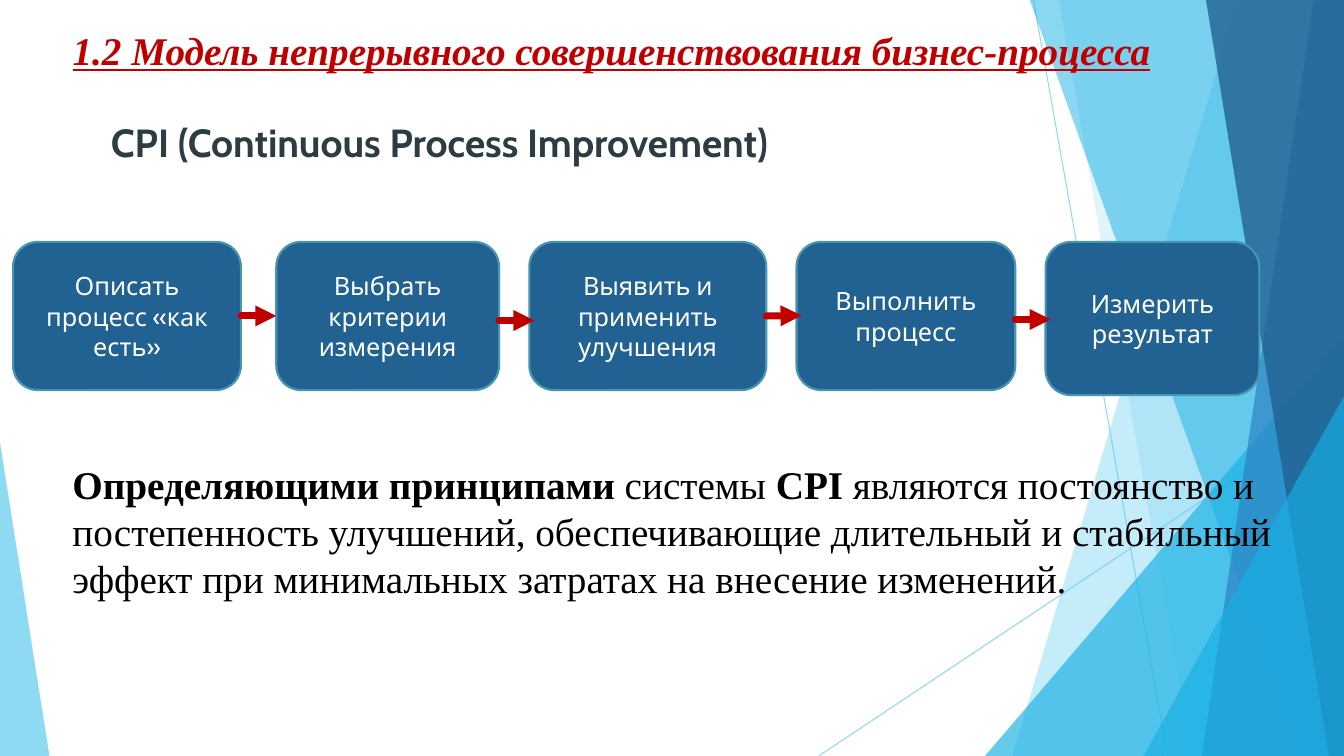
import pptx
import pptx.util
import pptx.dml.color
import pptx.enum.dml
import pptx.enum.shapes
import pptx.enum.text
import pptx.oxml
import pptx.oxml.ns

WIDTH, HEIGHT = 13.33, 7.5
SERIF, SANS = "Times New Roman", "Cabin"
TEXT_LEFT = 0.62
HANG = 0.38

HEADING = "1.2 Модель непрерывного совершенствования бизнес-процесса"
SUBHEADING = "CPI (Continuous Process Improvement)"
PRINCIPLES = [
    ("Определяющими принципами", True),
    (" системы ", False),
    ("CPI", True),
    (" являются постоянство и постепенность улучшений, обеспечивающие "
     "длительный и стабильный эффект при минимальных затратах на внесение изменений.", False),
]

# text, left, width, height, level of the arrow that leaves the step
STEP_TOP = 2.4
ARROW_LENGTH = 0.35
STEPS = [
    ("Описать процесс «как есть»", 0.13, 2.26, 1.47, 3.13),
    ("Выбрать критерии измерения", 2.74, 2.21, 1.47, 3.18),
    ("Выявить и применить улучшения", 5.25, 2.35, 1.47, 3.13),
    ("Выполнить процесс", 7.9, 2.17, 1.47, 3.17),
    ("Измерить результат", 10.37, 2.12, 1.52, None),
]

# from x, from y, to x, to y
RAYS = [(10.25, 0, 11.58, HEIGHT), (WIDTH, 4.03, 8.12, HEIGHT)]
# Veils reach the right edge: top x, bottom x. Peaks stand on the bottom edge: left, width, height, apex.
FACETS = [
    ("veil", (12.28, 10.04), "5FCBEF", 36),
    ("veil", (10.5, 11.82), "5FCBEF", 20),
    ("peak", (9.77, 3.56, 4.17, 1), "17B0E4", 66),
    ("veil", (10.21, 12.91), "17B0E4", 50),
    ("veil", (13.03, 11.92), "2E83C3", 70),
    ("veil", (11.96, 13.18), "226292", 80),
    ("peak", (11.34, 1.99, 3.57, 1), "17B0E4", 66),
    ("peak", (0, 0.49, 3.11, 0), "5FCBEF", 70),
]

inch = pptx.util.Inches
SHAPES = pptx.enum.shapes.MSO_SHAPE


def rgb(code):
    return pptx.dml.color.RGBColor.from_string(code)


def add_xml(parent, tag, **attributes):
    """Append a DrawingML element to parent."""
    element = pptx.oxml.parse_xml(f"<a:{tag} {pptx.oxml.ns.nsdecls('a')}/>")
    for name, value in attributes.items():
        element.set(name, value)
    parent.append(element)


def paint(fill, owner, code, opacity=100):
    fill.solid()
    fill.fore_color.rgb = rgb(code)
    if opacity < 100:
        color = next(owner.iter(pptx.oxml.ns.qn("a:srgbClr")))
        add_xml(color, "alpha", val=str(opacity * 1000))


def set_font(paragraph, name, size, code):
    paragraph.font.name = name
    paragraph.font.size = pptx.util.Pt(size)
    paragraph.font.color.rgb = rgb(code)


def add_line(slide, ends, code, weight, opacity=100):
    line = slide.shapes.add_connector(
        pptx.enum.shapes.MSO_CONNECTOR.STRAIGHT, *map(inch, ends))
    line.line.width = pptx.util.Pt(weight)
    properties = line._element.spPr
    paint(line.line.fill, properties, code, opacity)
    add_xml(properties, "effectLst")
    return line


def add_veil(slide, top_x, bottom_x):
    builder = slide.shapes.build_freeform(inch(top_x), inch(-0.01))
    corners = [(WIDTH, -0.01), (WIDTH, HEIGHT), (bottom_x, HEIGHT)]
    builder.add_line_segments([(inch(x), inch(y)) for x, y in corners], close=True)
    return builder.convert_to_shape()


def add_peak(slide, left, width, height, apex):
    peak = slide.shapes.add_shape(
        SHAPES.ISOSCELES_TRIANGLE, inch(left), inch(HEIGHT - height), inch(width), inch(height))
    peak.adjustments[0] = apex
    return peak


def add_backdrop(slide):
    for ends in RAYS:
        add_line(slide, ends, "5FCBEF", 0.75, 70)
    makers = {"veil": add_veil, "peak": add_peak}
    for kind, geometry, code, opacity in FACETS:
        facet = makers[kind](slide, *geometry)
        facet.shadow.inherit = False
        facet.line.fill.background()
        paint(facet.fill, facet._element.spPr, code, opacity)


def fill_title(slide):
    title = slide.shapes.title
    tree = title._element.getparent()
    tree.append(title._element)  # in front of the backdrop
    title.left, title.top = inch(TEXT_LEFT), inch(0.21)
    title.width, title.height = inch(11.62), inch(0.83)
    frame = title.text_frame
    frame.word_wrap = True
    frame.auto_size = pptx.enum.text.MSO_AUTO_SIZE.NONE
    frame.vertical_anchor = pptx.enum.text.MSO_ANCHOR.TOP
    frame.text = HEADING + "\n" + SUBHEADING
    heading, subheading = frame.paragraphs
    set_font(heading, SERIF, 28, "C00000")
    heading.font.italic = heading.font.underline = True
    set_font(subheading, SANS, 28, "2C3C43")
    subheading.space_before = pptx.util.Pt(32)
    subheading._p.get_or_add_pPr().set("marL", str(inch(HANG)))
    for paragraph in frame.paragraphs:
        paragraph.alignment = pptx.enum.text.PP_ALIGN.LEFT
        paragraph.font.bold = True


def add_step(slide, text, left, width, height):
    step = slide.shapes.add_shape(
        SHAPES.ROUNDED_RECTANGLE, inch(left), inch(STEP_TOP), inch(width), inch(height))
    step.shadow.inherit = False
    paint(step.fill, step._element.spPr, "226292")
    step.line.color.rgb = rgb("4696B1")
    step.line.width = pptx.util.Pt(1.5)
    step.text_frame.text = text
    step.text_frame.vertical_anchor = pptx.enum.text.MSO_ANCHOR.MIDDLE
    paragraph = step.text_frame.paragraphs[0]
    paragraph.alignment = pptx.enum.text.PP_ALIGN.CENTER
    set_font(paragraph, SANS, 18, "FFFFFF")
    return step


def add_process(slide):
    boxes = [add_step(slide, *step[:4]) for step in STEPS]
    for index, (_, left, width, height, level) in enumerate(STEPS[:-1]):
        start = left + width
        end = start + ARROW_LENGTH
        arrow = add_line(slide, (start, level, end, level), "C00000", 5)
        outline = arrow.line._get_or_add_ln()
        outline.set("cap", "rnd")
        add_xml(outline, "tailEnd", type="triangle")
        if abs(level - STEP_TOP - height / 2) < 0.01:
            arrow.begin_connect(boxes[index], 3)
            if abs(end - STEPS[index + 1][1]) < 0.01:
                arrow.end_connect(boxes[index + 1], 1)


def add_principles(slide):
    box = slide.shapes.add_textbox(inch(TEXT_LEFT), inch(4.52), inch(12.58), inch(1.51))
    box.text_frame.word_wrap = True
    box.text_frame.auto_size = pptx.enum.text.MSO_AUTO_SIZE.SHAPE_TO_FIT_TEXT
    paragraph = box.text_frame.paragraphs[0]
    set_font(paragraph, SERIF, 28, "000000")
    for text, bold in PRINCIPLES:
        run = paragraph.add_run()
        run.text = text
        run.font.bold = bold


def main():
    presentation = pptx.Presentation()
    presentation.slide_width, presentation.slide_height = inch(WIDTH), inch(HEIGHT)
    slide = presentation.slides.add_slide(presentation.slide_layouts[5])
    add_backdrop(slide)
    fill_title(slide)
    add_process(slide)
    add_principles(slide)
    presentation.save("out.pptx")


if __name__ == "__main__":
    main()
